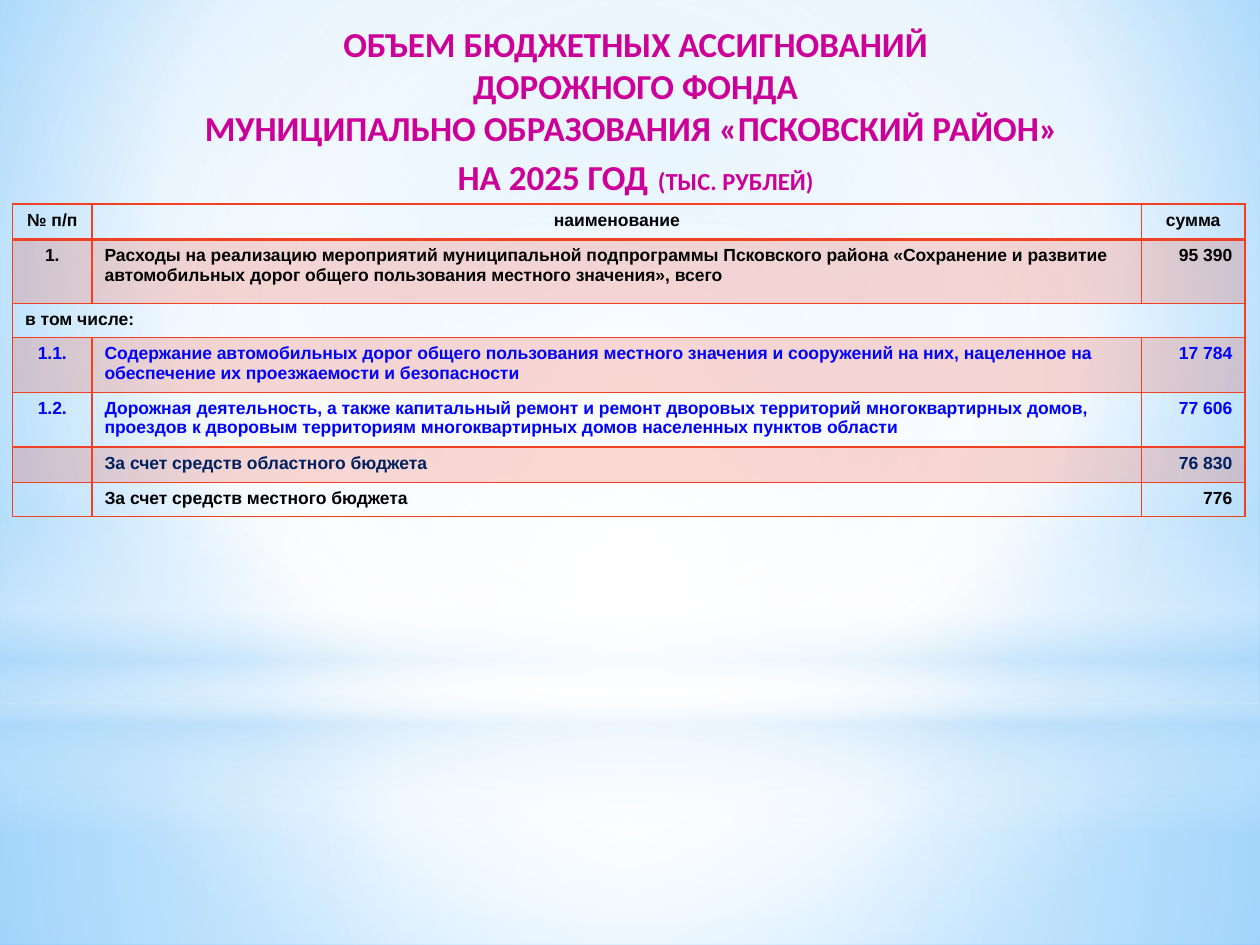
from dataclasses import dataclass

from lxml import etree
from pptx import Presentation
from pptx.dml.color import RGBColor
from pptx.enum.shapes import MSO_SHAPE
from pptx.enum.text import MSO_ANCHOR, MSO_AUTO_SIZE, PP_ALIGN
from pptx.oxml.ns import qn
from pptx.util import Inches, Pt

RECT, ELLIPSE = MSO_SHAPE.RECTANGLE, MSO_SHAPE.OVAL
LEFT, CENTER, RIGHT = PP_ALIGN.LEFT, PP_ALIGN.CENTER, PP_ALIGN.RIGHT
TOP, GROW = MSO_ANCHOR.TOP, MSO_AUTO_SIZE.SHAPE_TO_FIT_TEXT
WIDTH, HEIGHT = 10, 7.5


@dataclass(frozen=True)
class Theme:
    title: str = "CC0099"
    text: str = "000000"
    item: str = "0000FF"
    regional: str = "002060"
    accent: str = "F14124"
    white: str = "FFFFFF"
    haze: str = "B4DCFA"
    sky: str = "9ED5FF"
    deep_sky: str = "5BB9FF"
    title_font: str = "Calibri"
    table_font: str = "Arial"
    title_size: int = 20
    gap_size: int = 24
    unit_size: int = 14
    table_size: int = 10
    band_alpha: int = 20


THEME = Theme()
MIDDLE = (50, 50, 50, 50)

# preset, (left, top, width, height), stops (position, colour, opacity), focus or None for vertical
GLOWS = [
    (RECT, (0, 5.58, 10, 1.92),
     [(0, THEME.white, 91), (37, THEME.white, 76), (100, THEME.haze, 79)], MIDDLE),
    (RECT, (0, 0, 10, 5.58),
     [(0, THEME.white, 89), (48, THEME.white, 62), (100, THEME.haze, 79)], MIDDLE),
    (RECT, (0, 4.12, 10, 2.5),
     [(0, THEME.white, 0), (29, THEME.white, 30), (45, THEME.haze, 40),
      (55, THEME.white, 26), (65, THEME.haze, 60), (100, THEME.white, 0)], None),
    (ELLIPSE, (0, 1.75, 10, 5.58), [(0, THEME.white, 100), (56, THEME.white, 0)], MIDDLE),
]

TITLE = [
    [("ОБЪЕМ БЮДЖЕТНЫХ АССИГНОВАНИЙ", THEME.title_size)],
    [("ДОРОЖНОГО ФОНДА", THEME.title_size)],
    [("МУНИЦИПАЛЬНО ОБРАЗОВАНИЯ «ПСКОВСКИЙ РАЙОН» ", THEME.title_size)],
    [("НА 2025 ГОД", THEME.title_size), (" ", THEME.gap_size),
     ("(ТЫС. РУБЛЕЙ)", THEME.unit_size)],
]

COLUMNS = [0.63, 8.33, 0.82]
HEADER = ("№ п/п", "наименование", "сумма")
# row height, text colour, cells
ROWS = [
    (0.28, THEME.text, HEADER),
    (0.51, THEME.text, (
        "1.", "Расходы на реализацию мероприятий муниципальной подпрограммы Псковского района "
        "«Сохранение и развитие автомобильных дорог общего пользования местного значения», всего",
        "95 390")),
    (0.27, THEME.text, ("в том числе:",)),
    (0.43, THEME.item, (
        "1.1.", "Содержание автомобильных дорог общего пользования местного значения и сооружений "
        "на них, нацеленное на обеспечение их проезжаемости и безопасности", "17 784")),
    (0.43, THEME.item, (
        "1.2.", "Дорожная деятельность, а также капитальный ремонт и ремонт дворовых территорий "
        "многоквартирных домов, проездов к дворовым территориям многоквартирных домов населенных "
        "пунктов области", "77 606")),
    (0.28, THEME.regional, ("", "За счет средств областного бюджета", "76 830")),
    (0.27, THEME.text, ("", "За счет средств местного бюджета", "776")),
]


def add_node(parent, tag, **attributes):
    return etree.SubElement(parent, qn(tag), {key: str(value) for key, value in attributes.items()})


def paint_gradient(fill, holder, stops, focus):
    """Fill with a gradient: circular around focus, or running down when focus is None."""
    fill.gradient()
    plain = holder.find(qn("a:gradFill"))
    gradient = etree.Element(qn("a:gradFill"), rotWithShape="1")
    stop_list = add_node(gradient, "a:gsLst")
    for position, color, opacity in stops:
        stop = add_node(stop_list, "a:gs", pos=position * 1000)
        shade = add_node(stop, "a:srgbClr", val=color)
        if opacity < 100:
            add_node(shade, "a:alpha", val=opacity * 1000)
    if focus:
        circle = add_node(gradient, "a:path", path="circle")
        sides = {side: share * 1000 for side, share in zip("ltrb", focus)}
        add_node(circle, "a:fillToRect", **sides)
    else:
        add_node(gradient, "a:lin", ang=90 * 60000, scaled=0)
    holder.replace(plain, gradient)


def add_backdrop(page):
    background = page.background
    fill = background.fill
    fill.gradient()
    holder = page.element.find(".//" + qn("p:bgPr"))
    stops = [(0, THEME.sky, 100), (60, THEME.white, 100), (100, THEME.deep_sky, 100)]
    paint_gradient(fill, holder, stops, (20, 10, 20, 60))
    tree = page.shapes.title.element.getparent()
    for preset, place, stops, focus in GLOWS:
        glow = page.shapes.add_shape(preset, *map(Inches, place))
        glow.shadow.inherit = False
        glow.line.fill.background()
        paint_gradient(glow.fill, glow.element.spPr, stops, focus)
        tree.insert(tree.index(page.shapes.title.element), glow.element)


def add_span(para, text, font, size, color):
    span = para.add_run()
    span.text = text
    span.font.name, span.font.size, span.font.bold = font, Pt(size), True
    span.font.color.rgb = RGBColor.from_string(color)


def fill_title(box):
    box.left, box.top, box.width, box.height = map(Inches, (0.2, 0.13, 9.69, 1.51))
    frame = box.text_frame
    frame.word_wrap, frame.auto_size, frame.vertical_anchor = True, GROW, TOP
    for index, spans in enumerate(TITLE):
        para = frame.add_paragraph() if index else frame.paragraphs[0]
        para.alignment = CENTER
        for text, size in spans:
            add_span(para, text, THEME.title_font, size, THEME.title)


def set_borders(cell, top, bottom):
    properties = cell._tc.get_or_add_tcPr()
    for index, (side, width) in enumerate(zip("LRTB", (1, 1, top, bottom))):
        line = etree.Element(qn(f"a:ln{side}"), w=str(Pt(width)))
        add_node(add_node(line, "a:solidFill"), "a:srgbClr", val=THEME.accent)
        properties.insert(index, line)


def tint(cell, banded):
    if not banded:
        cell.fill.background()
        return
    cell.fill.solid()
    cell.fill.fore_color.rgb = RGBColor.from_string(THEME.accent)
    color = cell._tc.tcPr.find(".//" + qn("a:srgbClr"))
    add_node(color, "a:alpha", val=THEME.band_alpha * 1000)


def add_budget_table(page):
    place = (0.1, 1.62, sum(COLUMNS), sum(row[0] for row in ROWS))
    frame = page.shapes.add_table(len(ROWS), len(COLUMNS), *map(Inches, place))
    table = frame.table
    table.first_row = table.horz_banding = False
    for column, width in zip(table.columns, COLUMNS):
        column.width = Inches(width)
    for index, (height, color, texts) in enumerate(ROWS):
        table.rows[index].height = Inches(height)
        cells = list(table.rows[index].cells)
        for cell in cells:
            tint(cell, index % 2 == 1)
            set_borders(cell, 2 if index == 1 else 1, 2 if index == 0 else 1)
        if len(texts) == 1:
            cells[0].merge(cells[-1])
        alignments = (CENTER, LEFT, RIGHT) if len(texts) > 1 else (LEFT,)
        for cell, text, alignment in zip(cells, texts, alignments):
            para = cell.text_frame.paragraphs[0]
            para.alignment = CENTER if texts is HEADER else alignment
            if text:
                add_span(para, text, THEME.table_font, THEME.table_size, color)
            else:
                para._p.get_or_add_endParaRPr().set("sz", str(THEME.table_size * 100))


def main():
    deck = Presentation()
    deck.slide_width, deck.slide_height = Inches(WIDTH), Inches(HEIGHT)
    page = deck.slides.add_slide(deck.slide_layouts.get_by_name("Title Only"))
    add_backdrop(page)
    fill_title(page.shapes.title)
    add_budget_table(page)
    deck.save("out.pptx")


if __name__ == "__main__":
    main()
